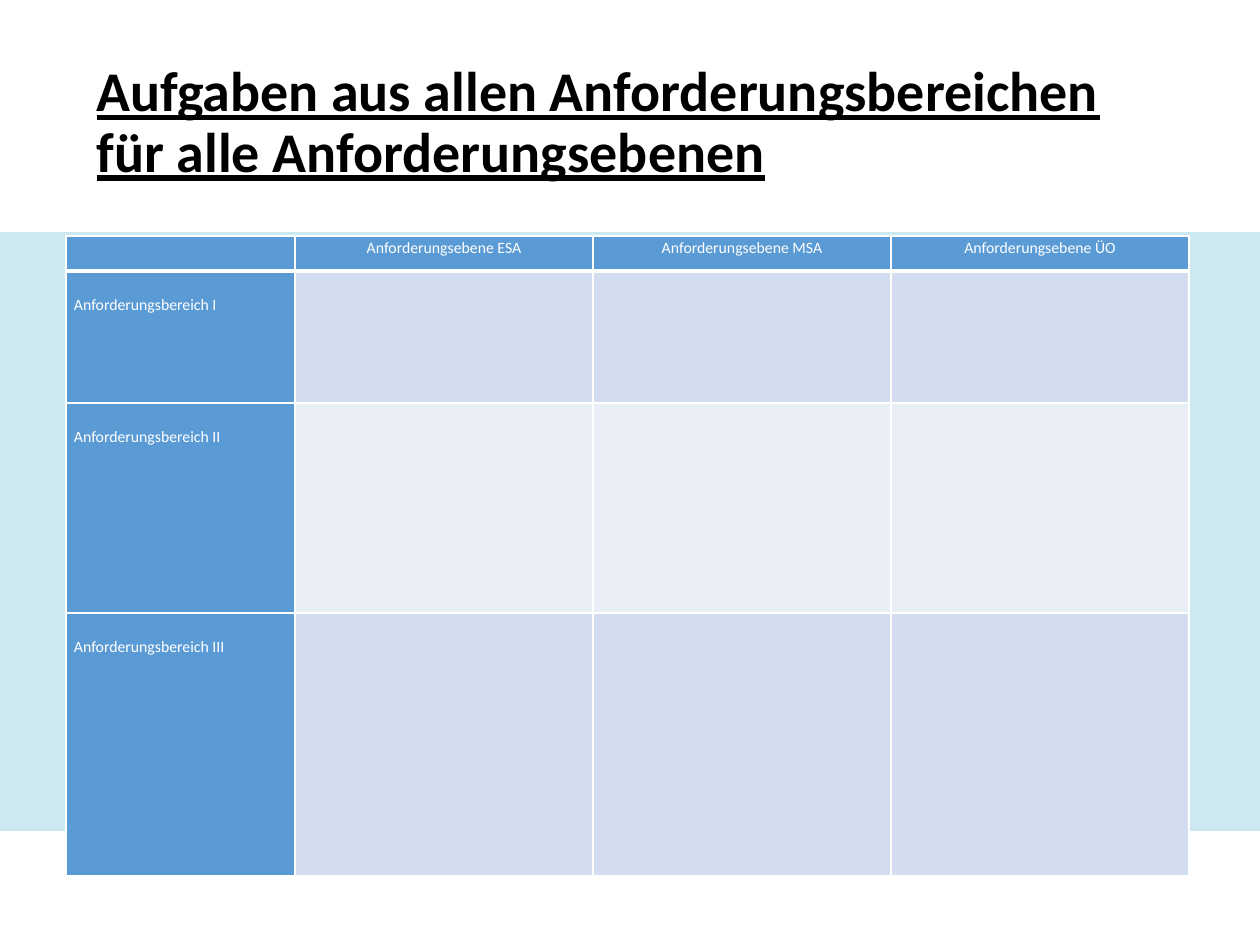
import pptx
import pptx.dml.color
import pptx.enum.shapes
import pptx.enum.text
import pptx.oxml
import pptx.oxml.ns
import pptx.util

PX = pptx.util.Inches(1) / 126
THEME = {
    "font": "Calibri", "title_size": 32, "label_size": 9,
    "title": "000000", "label": "FFFFFF", "border": "FFFFFF",
    "band": "CCE9F2", "header": "5B9BD5", "rows": ["D2DEEF", "EAEFF7"],
}
ALIGN = pptx.enum.text.PP_ALIGN
ANCHOR = pptx.enum.text.MSO_ANCHOR


def px(length):
    return pptx.util.Emu(round(length * PX))


def write(frame, text, *, size, color, align=ALIGN.LEFT, spacing=1.0, bold=False, underline=False):
    paragraph = frame.paragraphs[0]
    paragraph.alignment = align
    paragraph.line_spacing = spacing
    run = paragraph.add_run()
    run.text = text
    run.font.name = THEME["font"]
    run.font.size = pptx.util.Pt(size)
    run.font.bold = bold
    run.font.underline = underline
    run.font.color.rgb = pptx.dml.color.RGBColor.from_string(color)


prs = pptx.Presentation()
prs.slide_width, prs.slide_height = px(1260), px(945)
slide = prs.slides.add_slide(prs.slide_layouts[5])

band = slide.shapes.add_shape(
    pptx.enum.shapes.MSO_SHAPE.RECTANGLE, px(0), px(232), px(1260), px(599))
band.shadow.inherit = False
band.fill.solid()
band.fill.fore_color.rgb = pptx.dml.color.RGBColor.from_string(THEME["band"])
band.line.fill.background()

title = slide.shapes.title
title.left, title.top, title.width, title.height = px(84), px(32), px(1091), px(184)
title.text_frame.word_wrap = True
title.text_frame.auto_size = pptx.enum.text.MSO_AUTO_SIZE.NONE
title.text_frame.vertical_anchor = ANCHOR.MIDDLE
write(title.text_frame, "Aufgaben aus allen Anforderungsbereichen für alle Anforderungsebenen",
      size=THEME["title_size"], color=THEME["title"], spacing=0.9, bold=True, underline=True)

# Requirement areas down the side, requirement levels across the top
levels = ["ESA", "MSA", "ÜO"]
areas = ["I", "II", "III"]
labels = [[""] + [f"Anforderungsebene {level}" for level in levels]]
labels += [[f"Anforderungsbereich {area}"] + [""] * len(levels) for area in areas]
column_widths = [229] + [298] * len(levels)
row_heights = [35, 132, 210, 263]

matrix = slide.shapes.add_table(len(labels), len(column_widths), px(66), px(236),
                                px(sum(column_widths)), px(sum(row_heights))).table
for column, width in zip(matrix.columns, column_widths):
    column.width = px(width)
for row, height in zip(matrix.rows, row_heights):
    row.height = px(height)

for r, row_labels in enumerate(labels):
    for c, label in enumerate(row_labels):
        cell = matrix.cell(r, c)
        cell.margin_left = cell.margin_right = px(8)
        cell.margin_top = px(22 if r else 0)
        cell.margin_bottom = px(0)
        cell.vertical_anchor = ANCHOR.TOP
        if label:
            write(cell.text_frame, label, size=THEME["label_size"], color=THEME["label"],
                  align=ALIGN.LEFT if r else ALIGN.CENTER, spacing=1.15)
        else:
            # Keeps an empty cell from stretching its row
            end = pptx.oxml.ns.qn("a:endParaRPr")
            mark = cell.text_frame.paragraphs[0]._p.makeelement(
                end, {"sz": str(THEME["label_size"] * 100)})
            cell.text_frame.paragraphs[0]._p.append(mark)

        for side in "LRTB":
            points = 3 if r == 0 and side == "B" else 1
            cell._tc.get_or_add_tcPr().append(pptx.oxml.parse_xml(
                f'<a:ln{side} {pptx.oxml.ns.nsdecls("a")} w="{pptx.util.Pt(points)}">'
                f'<a:solidFill><a:srgbClr val="{THEME["border"]}"/></a:solidFill></a:ln{side}>'))
        fill = THEME["header"] if r == 0 or c == 0 else THEME["rows"][(r - 1) % 2]
        cell.fill.solid()
        cell.fill.fore_color.rgb = pptx.dml.color.RGBColor.from_string(fill)

prs.save("out.pptx")
